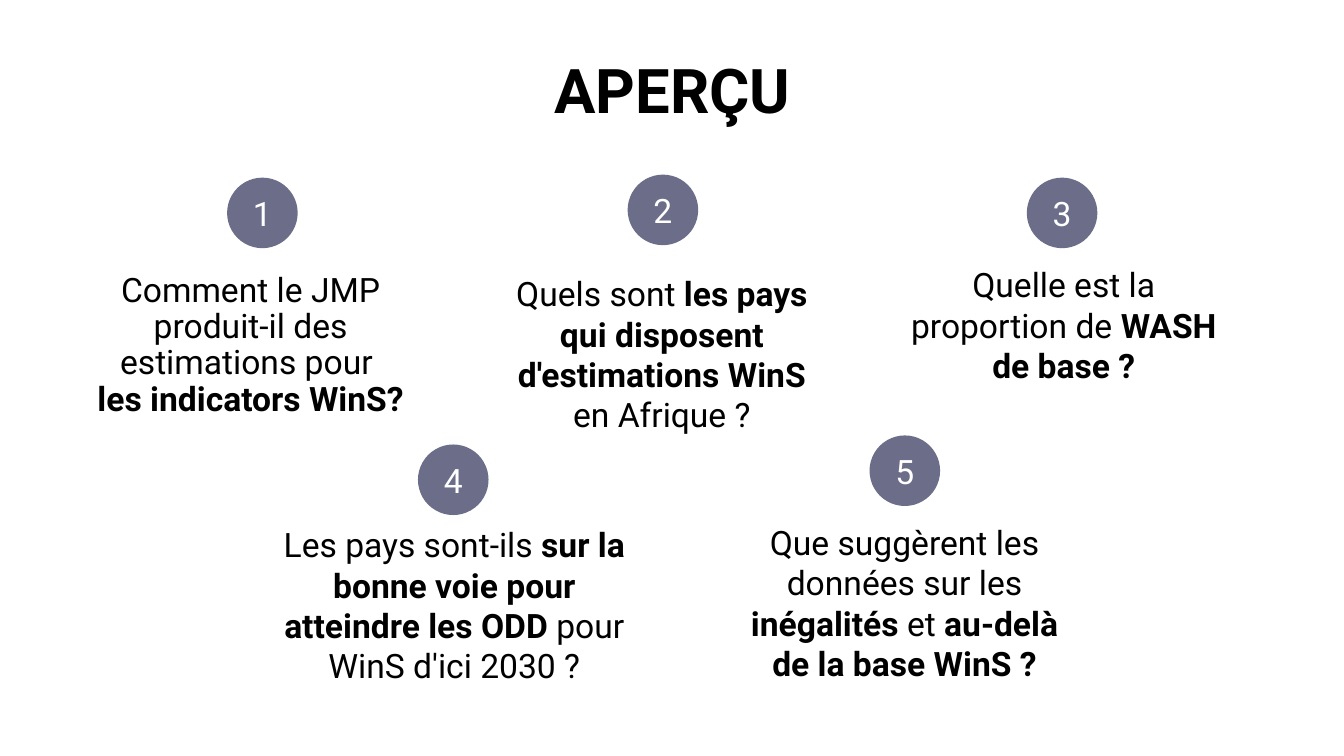
from pptx import Presentation
from pptx.dml.color import RGBColor
from pptx.enum.shapes import MSO_SHAPE as Shape
from pptx.enum.text import MSO_ANCHOR as Anchor, MSO_AUTO_SIZE as AutoSize, PP_ALIGN as Align
from pptx.oxml.ns import qn
from pptx.util import Inches, Pt

SLIDE_WIDTH, SLIDE_HEIGHT = 13.33, 7.5
BADGE_SIZE = 0.7

QUESTIONS = [
    ((16.9, 23.5), (6.1, 35.5, 25.1, 21.6), 0.9,
     ["Comment le JMP produit-il des estimations pour ", "|les indicators WinS?"]),
    ((46.7, 23.1), (36.4, 35.5, 25.7, 19.3), 1.0,
     ["Quels sont |les pays qui disposent d'estimations WinS |en Afrique ?"]),
    ((76.4, 23.5), (66.6, 34.3, 25.1, 30.7), 1.0,
     ["Quelle est la proportion de |WASH de base ?"]),
    ((31.1, 58.8), (20.2, 68.7, 27.2, 12.9), 1.0,
     ["Les pays sont-ils |sur la bonne voie pour atteindre les ODD| pour WinS d'ici 2030 ?"]),
    ((64.7, 57.6), (54.1, 68.4, 26.4, 31.6), 1.0,
     ["Que suggèrent les données sur les |inégalités| et |au-delà de la base WinS ?"]),
]
BODY_NUMBER = 3


def color(code):
    return RGBColor.from_string(code)


class Overview:
    """Draws one page on a grid of 100 columns by 100 rows."""

    font = "Roboto"
    ink, paper, accent = "000000", "FFFFFF", "6C6E89"

    def __init__(self, deck):
        self.page = deck.slides.add_slide(deck.slide_layouts[1])

    def point(self, column, row):
        return Inches(SLIDE_WIDTH * column / 100), Inches(SLIDE_HEIGHT * row / 100)

    def place(self, box, area):
        box.left, box.top = self.point(*area[:2])
        box.width, box.height = self.point(*area[2:])

    def fill_text(self, box, lines, size=24, ink=ink, spacing=1.0, anchor=Anchor.TOP):
        frame = box.text_frame
        frame.word_wrap = True
        frame.auto_size = AutoSize.NONE
        frame.vertical_anchor = anchor
        for index, line in enumerate(lines):
            para = frame.add_paragraph() if index else frame.paragraphs[0]
            para.alignment = Align.CENTER
            para.line_spacing = spacing
            para.space_before = Pt(0)
            for order, text in enumerate(line.split("|")):
                if text:
                    span = para.add_run()
                    span.text = text
                    span.font.name = self.font
                    span.font.size = Pt(size)
                    span.font.bold = order % 2 == 1
                    span.font.color.rgb = color(ink)

    def title(self, text, area):
        box = self.page.shapes.title
        self.place(box, area)
        self.fill_text(box, ["|" + text], size=44, spacing=0.9, anchor=Anchor.MIDDLE)

    def body(self, lines, area, spacing):
        box = self.page.placeholders[1]
        self.place(box, area)
        self.fill_text(box, lines, spacing=spacing)
        for para in box.text_frame.paragraphs:
            settings = para._p.get_or_add_pPr()
            settings.set("marL", "0")
            settings.set("indent", "0")
            settings.append(settings.makeelement(qn("a:buNone"), {}))

    def text(self, lines, area, spacing):
        box = self.page.shapes.add_textbox(0, 0, 0, 0)
        self.place(box, area)
        self.fill_text(box, lines, spacing=spacing)

    def badge(self, number, corner):
        size = Inches(BADGE_SIZE)
        circle = self.page.shapes.add_shape(Shape.OVAL, *self.point(*corner), size, size)
        circle.shadow.inherit = False
        circle.fill.solid()
        circle.fill.fore_color.rgb = color(self.accent)
        circle.line.fill.background()
        self.fill_text(circle, [str(number)], ink=self.paper, anchor=Anchor.MIDDLE)


def main():
    deck = Presentation()
    deck.slide_width, deck.slide_height = Inches(SLIDE_WIDTH), Inches(SLIDE_HEIGHT)
    overview = Overview(deck)
    overview.title("APERÇU", (6.9, 2.7, 86.3, 19.3))
    for number, (corner, area, spacing, lines) in enumerate(QUESTIONS, 1):
        overview.badge(number, corner)
        draw = overview.body if number == BODY_NUMBER else overview.text
        draw(lines, area, spacing)
    deck.save("out.pptx")


if __name__ == "__main__":
    main()
